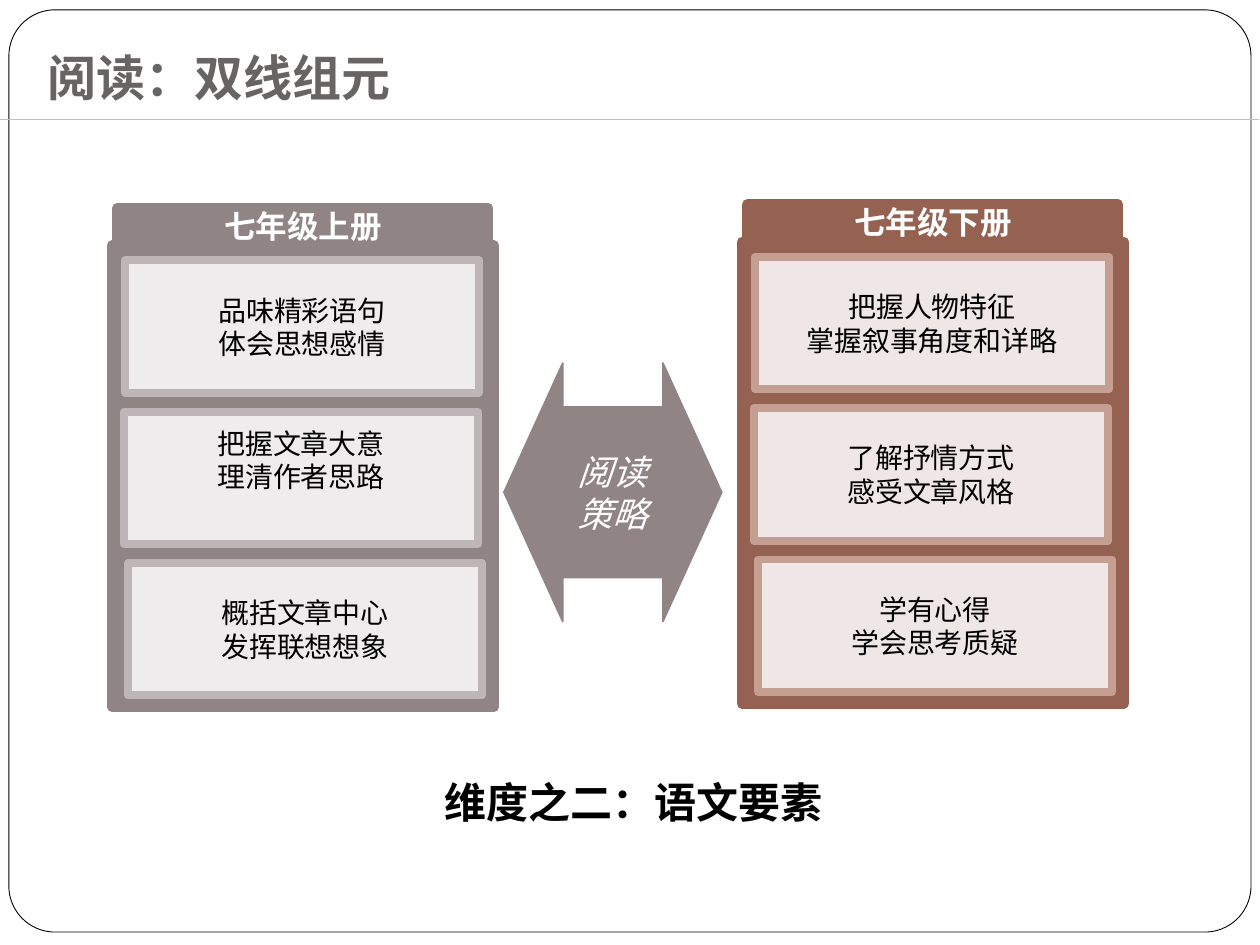
import pptx
import pptx.dml.color
import pptx.enum.shapes
import pptx.enum.text
import pptx.oxml.ns
import pptx.util
from lxml import etree
from pptx.util import Cm

SHAPE = pptx.enum.shapes.MSO_SHAPE
ALIGN = pptx.enum.text.PP_ALIGN
ANCHOR = pptx.enum.text.MSO_ANCHOR
qn = pptx.oxml.ns.qn

SANS = "Noto Sans CJK SC"
COLORS = {
    "white": "FFFFFF",
    "black": "000000",
    "title": "696464",
    "rule": "C0C0C0",
    "mauve": "918485",
    "mauve_edge": "BDB5B6",
    "brown": "956251",
    "brown_edge": "C49F92",
}


def rgb(name):
    return pptx.dml.color.RGBColor.from_string(COLORS[name])


def write(shape, text, size, font, color, align=ALIGN.CENTER, anchor=ANCHOR.MIDDLE,
          bold=False, italic=False):
    """Fill a shape with text, one paragraph per line, in one format."""
    frame = shape.text_frame
    frame.text = text
    frame.word_wrap = True
    frame.vertical_anchor = anchor
    for paragraph in frame.paragraphs:
        paragraph.alignment = align
        paragraph.font.size = pptx.util.Pt(size)
        paragraph.font.name = font
        paragraph.font.bold = bold
        paragraph.font.italic = italic
        paragraph.font.color.rgb = rgb(color)
        latin = next(paragraph._p.iter(qn("a:latin")))
        east_asian = etree.Element(qn("a:ea"), typeface=SANS)
        latin.addnext(east_asian)


def add_block(kind, left, top, width, height, fill, line, line_width):
    block = slide.shapes.add_shape(kind, Cm(left), Cm(top), Cm(width), Cm(height))
    block.shadow.inherit = False
    block.fill.solid()
    block.fill.fore_color.rgb = rgb(fill)
    block.line.color.rgb = rgb(line)
    block.line.width = pptx.util.Pt(line_width)
    return block


presentation = pptx.Presentation()
presentation.slide_width = Cm(25.4)
presentation.slide_height = Cm(19.05)
slide = presentation.slides.add_slide(presentation.slide_layouts[5])

# Page frame, behind the title
page_frame = add_block(SHAPE.ROUNDED_RECTANGLE, 0.18, 0.2, 25.04, 18.59, "white", "black", 0.5)
page_frame.adjustments[0] = 0.05
slide.shapes._spTree.insert(2, page_frame._element)

title = slide.shapes.title
title.left, title.top, title.width, title.height = Cm(0.71), Cm(0.76), Cm(23.42), Cm(1.63)
write(title, "阅读：双线组元", 28, SANS, "title", ALIGN.LEFT, ANCHOR.BOTTOM, bold=True)
title.text_frame.auto_size = pptx.enum.text.MSO_AUTO_SIZE.NONE
title.text_frame.margin_bottom = Cm(0.25)

# One panel per volume, with a heading tab and three cards
volumes = [
    (2.26, 4.95, "mauve", "七年级上册",
     ["品味精彩语句\n体会思想感情", "把握文章大意\n理清作者思路", "概括文章中心\n发挥联想想象"]),
    (14.96, 4.88, "brown", "七年级下册",
     ["把握人物特征\n掌握叙事角度和详略", "了解抒情方式\n感受文章风格", "学有心得\n学会思考质疑"]),
]
CARD_INDENTS = [0.26, 0.24, 0.32]
CARD_PITCH = 3.05

for left, top, color, heading, goals in volumes:
    add_block(SHAPE.RECTANGLE, left, top, 7.7, 9.3, color, color, 6)
    tab = add_block(SHAPE.RECTANGLE, left + 0.11, top - 0.76, 7.47, 0.71, color, color, 6)
    write(tab, heading, 18, "Times New Roman", "white", bold=True)
    for row, (indent, goal) in enumerate(zip(CARD_INDENTS, goals)):
        card = add_block(SHAPE.RECTANGLE, left + indent, top + 0.3 + row * CARD_PITCH,
                         7.14, 2.67, "white", color + "_edge", 4.5)
        fill_color = card._element.spPr.find(qn("a:solidFill"))[0]
        etree.SubElement(fill_color, qn("a:alpha"), val="85000")
        write(card, goal, 16, SANS, "black")
        if goal.startswith("把握文章"):
            card.text_frame.margin_bottom = Cm(0.86)  # this text sits higher

strategy = add_block(SHAPE.LEFT_RIGHT_ARROW, 10.16, 7.32, 4.39, 5.21, "mauve", "mauve", 1)
strategy.adjustments[0] = 0.66
strategy.adjustments[1] = 0.27
write(strategy, "阅读\n策略", 20, "Arial", "white", italic=True)

title_rule = slide.shapes.add_connector(
    pptx.enum.shapes.MSO_CONNECTOR.STRAIGHT, 0, Cm(2.41), Cm(25.37), Cm(2.41))
title_rule.line.color.rgb = rgb("rule")
title_rule.line.width = pptx.util.Pt(0.75)
etree.SubElement(title_rule._element.spPr, qn("a:effectLst"))

caption = slide.shapes.add_textbox(Cm(8.71), Cm(15.52), Cm(8.41), Cm(1.27))
write(caption, "维度之二：语文要素", 24, "Arial", "black", ALIGN.LEFT, ANCHOR.TOP, bold=True)

presentation.save("out.pptx")
